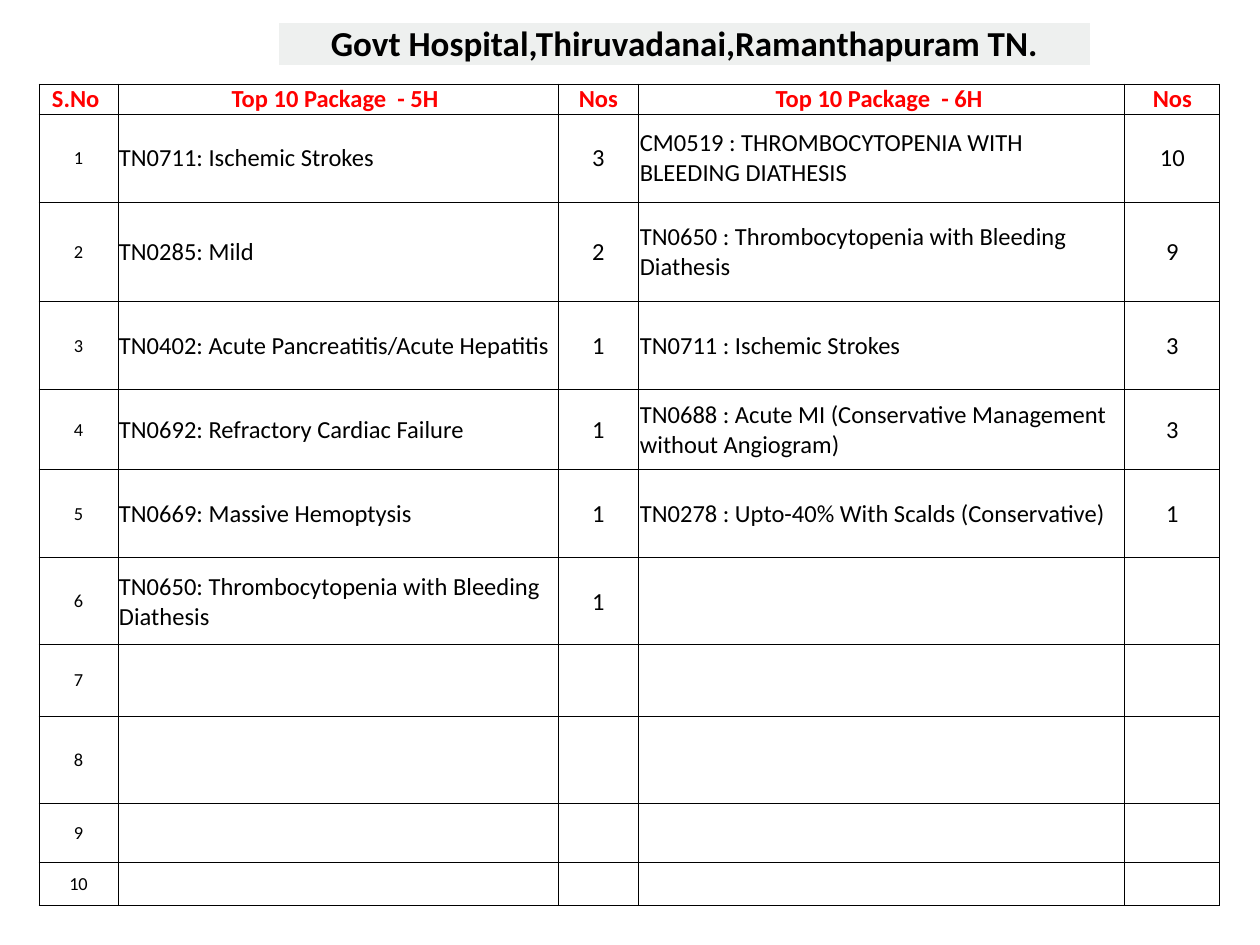
from dataclasses import dataclass

from lxml.etree import SubElement
from pptx import Presentation
from pptx.dml.color import RGBColor
from pptx.enum.text import MSO_ANCHOR, PP_ALIGN
from pptx.oxml.ns import qn
from pptx.util import Pt

PX = 914400 // 126
HUES = {"ink": "000000", "head": "FF0000", "paper": "FFFFFF", "band": "EEF0EF"}


@dataclass
class Look:
    size: float
    hue: str = "ink"
    bold: bool = False
    align: PP_ALIGN = PP_ALIGN.CENTER
    anchor: MSO_ANCHOR = MSO_ANCHOR.MIDDLE
    fill: str = "paper"
    inset: int = 0


@dataclass
class Grid:
    left: int
    top: int
    cols: list[int]
    rows: list[int]
    line: str
    width: float


TITLE = Look(20, bold=True, anchor=MSO_ANCHOR.BOTTOM, fill="band", inset=1)
HEAD = Look(14, "head", True)
INDEX = Look(10.5)
NAME = Look(14, align=PP_ALIGN.LEFT, inset=1)
COUNT = Look(14, inset=1)
BODY = [INDEX, NAME, COUNT, NAME, COUNT]

HEADS = ["S.No ", "Top 10 Package  - 5H ", "Nos", "Top 10 Package  - 6H ", "Nos"]
FIVE = [
    ("TN0711: Ischemic Strokes", "3"),
    ("TN0285: Mild", "2"),
    ("TN0402: Acute Pancreatitis/Acute Hepatitis", "1"),
    ("TN0692: Refractory Cardiac Failure", "1"),
    ("TN0669: Massive Hemoptysis", "1"),
    ("TN0650: Thrombocytopenia with Bleeding Diathesis", "1"),
]
SIX = [
    ("CM0519 : THROMBOCYTOPENIA WITH BLEEDING DIATHESIS", "10"),
    ("TN0650 : Thrombocytopenia with Bleeding Diathesis", "9"),
    ("TN0711 : Ischemic Strokes", "3"),
    ("TN0688 : Acute MI (Conservative Management without Angiogram)", "3"),
    ("TN0278 : Upto-40% With Scalds (Conservative)", "1"),
]


def color(key: str) -> RGBColor:
    return RGBColor.from_string(HUES[key])


def edge(cell, hue: str, width: float) -> None:
    """Outline all four sides; borders must precede the cell's fill."""
    props = cell._tc.get_or_add_tcPr()
    for spot, side in enumerate(("lnL", "lnR", "lnT", "lnB")):
        line = SubElement(props, qn(f"a:{side}"), w=str(Pt(width)))
        SubElement(SubElement(line, qn("a:solidFill")), qn("a:srgbClr"), val=HUES[hue])
        props.insert(spot, line)


def write(cell, text: str, look: Look) -> None:
    side = look.inset * PX
    form = {"margin_left": side, "margin_right": side, "margin_top": side,
            "margin_bottom": 0, "vertical_anchor": look.anchor}
    for key, value in form.items():
        setattr(cell, key, value)
    cell.fill.solid()
    cell.fill.fore_color.rgb = color(look.fill)
    if not text:
        return
    para = cell.text_frame.paragraphs[0]
    para.alignment = look.align
    run = para.add_run()
    run.text = text
    font = {"name": "Calibri", "size": Pt(look.size), "bold": look.bold}
    for key, value in font.items():
        setattr(run.font, key, value)
    run.font.color.rgb = color(look.hue)


def draw(slide, grid: Grid, texts: list[list[str]], looks: list[list[Look]]) -> None:
    box = (grid.left, grid.top, sum(grid.cols), sum(grid.rows))
    table = slide.shapes.add_table(
        len(grid.rows), len(grid.cols), *(n * PX for n in box)).table
    table.first_row = table.horz_banding = False
    for col, width in zip(table.columns, grid.cols):
        col.width = width * PX
    for row, high, words, forms in zip(table.rows, grid.rows, texts, looks):
        row.height = high * PX
        for cell, text, look in zip(row.cells, words, forms):
            write(cell, text, look)
            edge(cell, grid.line, grid.width)


def main() -> None:
    deck = Presentation()
    deck.slide_width, deck.slide_height = 1260 * PX, 945 * PX
    slide = deck.slides.add_slide(deck.slide_layouts[6])

    title = Grid(278, 22, [813], [42], "paper", 1)
    draw(slide, title, [["Govt Hospital,Thiruvadanai,Ramanthapuram TN."]], [[TITLE]])

    ranks = Grid(39, 84, [79, 440, 81, 486, 95],
                 [30, 88, 100, 88, 80, 88, 87, 72, 87, 59, 43], "ink", 0.5)
    count = len(ranks.rows) - 1
    blank = ("", "")
    five, six = (part + [blank] * (count - len(part)) for part in (FIVE, SIX))
    body = [[str(n), *a, *b] for n, (a, b) in enumerate(zip(five, six), 1)]
    draw(slide, ranks, [HEADS] + body, [[HEAD] * len(HEADS)] + [BODY] * count)
    deck.save("out.pptx")


if __name__ == "__main__":
    main()
